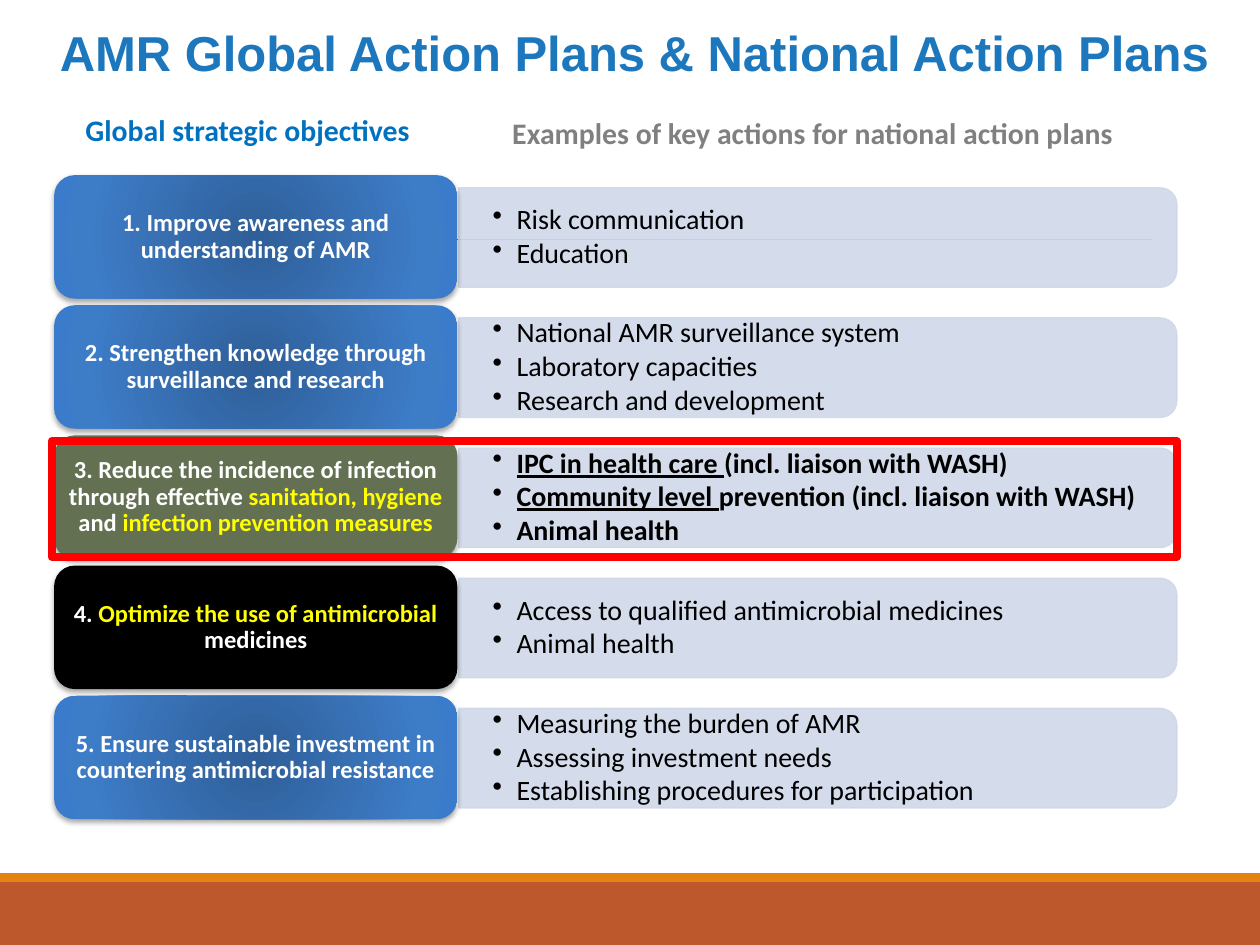
from lxml.etree import SubElement
from pptx import Presentation
from pptx.dml.color import RGBColor
from pptx.enum.shapes import MSO_CONNECTOR, MSO_SHAPE
from pptx.enum.text import MSO_ANCHOR, MSO_AUTO_SIZE, PP_ALIGN
from pptx.oxml import parse_xml
from pptx.oxml.ns import nsdecls, qn
from pptx.util import Inches, Pt

COLORS = {
    "title": "1C77BD", "heading": "0070C0", "gray": "808080", "panel": "D0D8E8",
    "olive": "637052", "black": "000000", "white": "FFFFFF", "yellow": "FFFF00",
    "red": "FF0000", "footer": "BD582C", "footer_edge": "E48312",
}
BLUE_STOPS = [(0, "2F5F99"), (80, "3D7CC7"), (100, "3A7CCB")]

# Label fill, label spans (text, color), actions (underlined part, rest), bold actions
ROWS = [
    ("blue", [("1. Improve awareness and understanding of AMR", "white")],
     [("", "Risk communication"), ("", "Education")], False),
    ("blue", [("2. Strengthen knowledge through surveillance and research", "white")],
     [("", "National AMR surveillance system"), ("", "Laboratory capacities"),
      ("", "Research and development")], False),
    ("olive", [("3. Reduce the incidence of infection through effective ", "white"),
               ("sanitation, hygiene ", "yellow"), ("and ", "white"),
               ("infection prevention measures", "yellow")],
     [("IPC in health care ", "(incl. liaison with WASH)"),
      ("Community level ", "prevention (incl. liaison with WASH)"),
      ("", "Animal health")], True),
    ("black", [("4. ", "white"), ("Optimize the use of antimicrobial ", "yellow"),
               ("medicines", "white")],
     [("", "Access to qualified antimicrobial medicines"), ("", "Animal health")], False),
    ("blue", [("5. Ensure sustainable investment in countering antimicrobial resistance",
               "white")],
     [("", "Measuring the burden of AMR"), ("", "Assessing investment needs"),
      ("", "Establishing procedures for participation")], False),
]
ROW_TOP, ROW_PITCH = 1.39, 1.033


def rgb(name):
    return RGBColor.from_string(COLORS[name])


def style(font, size, color, bold=False, name="Calibri"):
    font.name, font.size, font.bold = name, Pt(size), bold
    font.color.rgb = rgb(color)


def set_margins(frame, left, top, right, bottom):
    frame.margin_left, frame.margin_top = Inches(left), Inches(top)
    frame.margin_right, frame.margin_bottom = Inches(right), Inches(bottom)


def add_block(page, kind, left, top, width, height, fill=None):
    block = page.shapes.add_shape(
        kind, Inches(left), Inches(top), Inches(width), Inches(height))
    block.shadow.inherit = False
    block.line.fill.background()
    if fill:
        block.fill.solid()
        block.fill.fore_color.rgb = rgb(fill)
    else:
        block.fill.background()
    return block


def add_footer(page, top, edge):
    add_block(page, MSO_SHAPE.RECTANGLE, 0, top, 10, 7.5 - top, "footer")
    add_block(page, MSO_SHAPE.RECTANGLE, 0, top - edge, 10, edge, "footer_edge")


def add_rule(page, left, right, y):
    rule = page.shapes.add_connector(
        MSO_CONNECTOR.STRAIGHT, Inches(left), Inches(y), Inches(right), Inches(y))
    rule.line.color.rgb = rgb("gray")
    rule.line.width = Pt(0.5)
    SubElement(rule._element.spPr, qn("a:effectLst"))


def place_title(page, left, top, width, height):
    title = page.shapes.title
    title.left, title.top = Inches(left), Inches(top)
    title.width, title.height = Inches(width), Inches(height)
    frame = title.text_frame
    frame.text = "AMR Global Action Plans & National Action Plans"
    frame.auto_size = MSO_AUTO_SIZE.NONE
    frame.vertical_anchor = MSO_ANCHOR.MIDDLE
    set_margins(frame, 0.15, 0.15, 0.15, 0)
    para = frame.paragraphs[0]
    para.alignment = PP_ALIGN.CENTER
    style(para.runs[0].font, 28, "title", True, "Arial")


def add_heading(page, left, top, width, text, color):
    box = page.shapes.add_textbox(Inches(left), Inches(top), Inches(width), Inches(0.38))
    frame = box.text_frame
    frame.text = text
    frame.word_wrap = False
    frame.auto_size = MSO_AUTO_SIZE.SHAPE_TO_FIT_TEXT
    para = frame.paragraphs[0]
    para.alignment = PP_ALIGN.CENTER
    style(para.runs[0].font, 17, color, True)


def fill_radial(block):
    """Fill the block with blue that darkens towards its centre."""
    stops = "".join(f'<a:gs pos="{position * 1000}"><a:srgbClr val="{color}"/></a:gs>'
                    for position, color in BLUE_STOPS)
    gradient = parse_xml(
        f'<a:gradFill {nsdecls("a")} rotWithShape="1"><a:gsLst>{stops}</a:gsLst>'
        '<a:path path="circle"><a:fillToRect l="50000" t="50000" r="50000" b="50000"/>'
        '</a:path></a:gradFill>')
    properties = block._element.spPr
    properties.replace(properties.find(qn("a:noFill")), gradient)


def add_soft_shadow(block):
    effects = block._element.spPr.find(qn("a:effectLst"))
    effects.append(parse_xml(
        f'<a:outerShdw {nsdecls("a")} blurRad="{Pt(3.1)}" dist="{Pt(1.8)}" dir="5400000" '
        'rotWithShape="0"><a:srgbClr val="000000"><a:alpha val="35000"/></a:srgbClr>'
        '</a:outerShdw>'))


def add_panel(page, left, top, width, height):
    """Add a bar rounded at its right end: an upright shape turned by 90 degrees."""
    panel = add_block(page, MSO_SHAPE.ROUND_2_SAME_RECTANGLE,
                      left + (width - height) / 2, top + (height - width) / 2,
                      height, width, "panel")
    panel.rotation = 90
    panel.line.color.rgb = rgb("panel")
    panel.line.width = Pt(0.75)
    for color in panel._element.spPr.iter(qn("a:srgbClr")):
        SubElement(color, qn("a:alpha"), val="90000")


def add_actions(page, left, top, width, height, actions, bold):
    box = page.shapes.add_textbox(Inches(left), Inches(top), Inches(width), Inches(height))
    frame = box.text_frame
    frame.word_wrap = True
    frame.vertical_anchor = MSO_ANCHOR.MIDDLE
    set_margins(frame, 0.27, 0.14, 0.27, 0.14)
    for index, (underlined, rest) in enumerate(actions):
        para = frame.paragraphs[0] if index == 0 else frame.add_paragraph()
        para.level = 1
        para.line_spacing = 0.9
        para.space_after = Pt(2)
        properties = para._p.get_or_add_pPr()
        properties.set("marL", str(Inches(0.19)))
        properties.set("indent", str(Inches(-0.19)))
        SubElement(properties, qn("a:buChar"), char="•")
        for text, underline in ((underlined, True), (rest, False)):
            if text:
                span = para.add_run()
                span.text = text
                style(span.font, 16, "black", bold)
                span.font.underline = underline


def add_objective(page, left, top, width, height, fill, spans):
    block = add_block(page, MSO_SHAPE.ROUNDED_RECTANGLE, left, top, width, height,
                      None if fill == "blue" else fill)
    if fill == "blue":
        fill_radial(block)
    add_soft_shadow(block)
    frame = block.text_frame
    frame.word_wrap = True
    frame.vertical_anchor = MSO_ANCHOR.MIDDLE
    set_margins(frame, 0.06, 0.03, 0.06, 0.03)
    para = frame.paragraphs[0]
    para.alignment = PP_ALIGN.CENTER
    para.line_spacing = 0.9
    for text, color in spans:
        span = para.add_run()
        span.text = text
        style(span.font, 14, color, True)


def add_row(page, top, fill, spans, actions, bold):
    add_panel(page, 3.64, top + 0.1, 5.7, 0.79)
    add_actions(page, 3.64, top + 0.14, 5.66, 0.71, actions, bold)
    add_objective(page, 0.43, top, 3.2, 0.98, fill, spans)


def add_highlight(page, left, top, width, height):
    frame = add_block(page, MSO_SHAPE.RECTANGLE, left, top, width, height)
    frame.line.color.rgb = rgb("red")
    frame.line.width = Pt(4.5)


def main():
    deck = Presentation()
    deck.slide_width, deck.slide_height = Inches(10), Inches(7.5)
    page = deck.slides.add_slide(deck.slide_layouts[5])
    add_footer(page, 7, 0.07)
    add_rule(page, 0.98, 9.15, 1.9)
    place_title(page, 0.18, 0, 9.71, 0.68)
    for index, row in enumerate(ROWS):
        add_row(page, ROW_TOP + index * ROW_PITCH, *row)
    add_heading(page, 0.57, 0.84, 2.79, "Global strategic objectives", "heading")
    add_heading(page, 3.95, 0.86, 5,
                "Examples of key actions for national action plans", "gray")
    add_highlight(page, 0.41, 3.5, 8.93, 0.92)
    deck.save("out.pptx")


if __name__ == "__main__":
    main()
